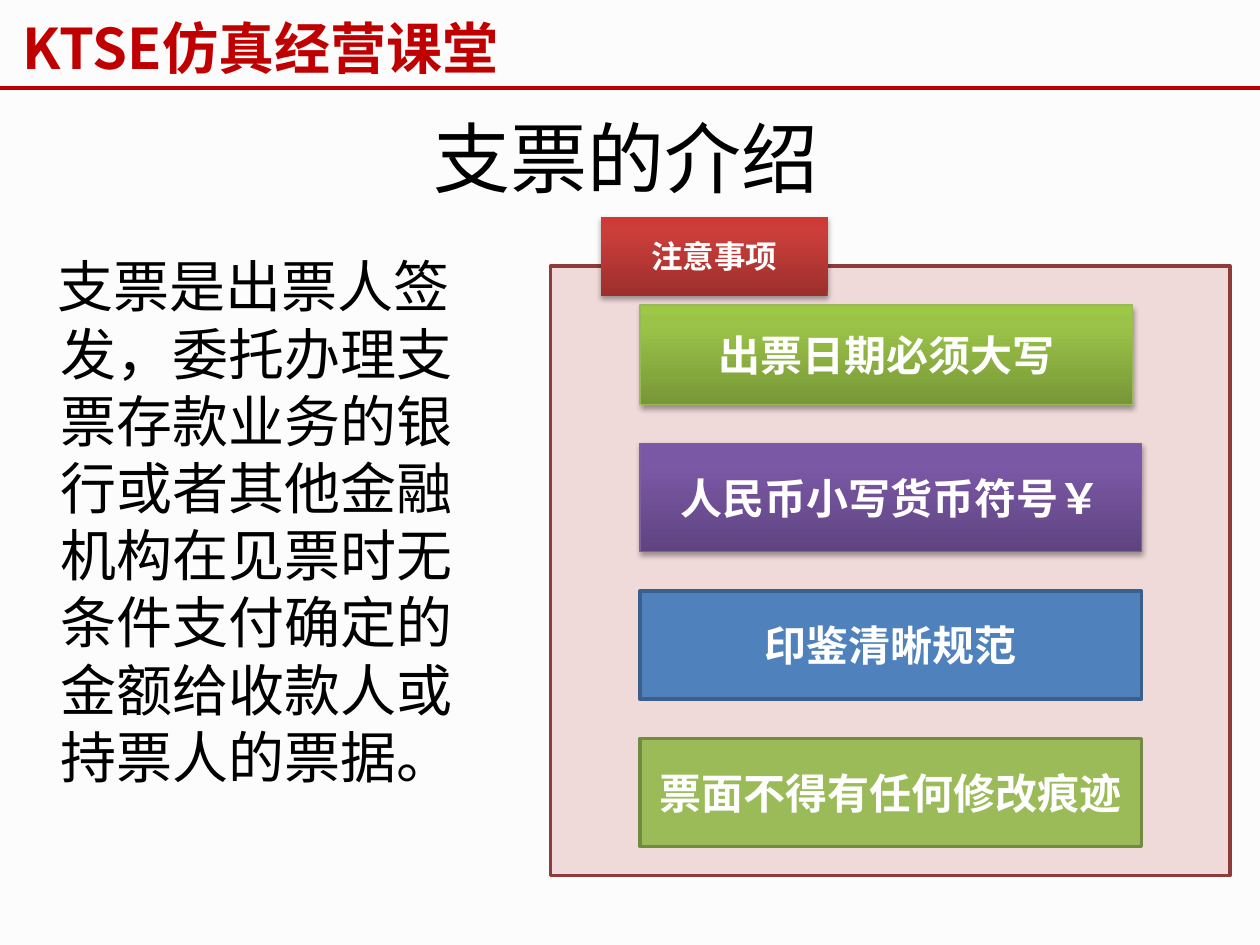
from dataclasses import dataclass
from typing import Optional

from lxml.etree import SubElement
from pptx import Presentation
from pptx.dml.color import RGBColor as RGB
from pptx.enum.shapes import MSO_CONNECTOR as Conn, MSO_SHAPE as Kind
from pptx.enum.text import MSO_ANCHOR as Anchor, PP_ALIGN as Align
from pptx.oxml.ns import qn
from pptx.util import Inches, Pt


@dataclass(frozen=True)
class Theme:
    back: str = "FCFCFC"
    brand: str = "C00000"
    ink: str = "000000"
    light: str = "FFFFFF"
    panel: str = "C0504D"
    edge: str = "8E3B39"
    font: str = "Calibri"
    head: str = "Noto Sans CJK SC"
    title: int = 44
    body: int = 32
    tile: int = 24
    tab: int = 18


T = Theme()


@dataclass(frozen=True)
class Run:
    text: str
    size: int
    color: str
    bold: bool = False
    font: str = T.font
    track: int = 0


@dataclass(frozen=True)
class Look:
    """Fill colours (three for a gradient, bottom to top) and outline."""
    fill: tuple[str, ...]
    line: Optional[str] = None
    width: float = 0.75
    alpha: int = 100
    kind: Kind = Kind.RECTANGLE


@dataclass(frozen=True)
class Tile:
    words: tuple[str, ...]
    width: float
    height: float
    look: Look


RED = Look(("9C2F2D", "CB3E3A", "CE3B37"))
STEP = Kind.FLOWCHART_PROCESS
TILES = (
    Tile(("出票日期必须大写",), 3.91, 0.79,
         Look(("779737", "9BC348", "9DC746"), "98B955")),
    Tile(("人民币小写货币符号", "￥"), 3.98, 0.86,
         Look(("5F4480", "7B58A6", "7C57A8"), "7D60A0")),
    Tile(("印鉴清晰规范",), 3.98, 0.86,
         Look(("4F81BD",), "3A5F8C", 2, kind=STEP)),
    Tile(("票面不得有任何修改痕迹",), 3.98, 0.86,
         Look(("9BBB59",), "738A42", 2, kind=STEP)),
)
TILE_X, TILE_Y, GAP = 5.08, 2.42, 0.31


def place(x: float, y: float, w: float, h: float) -> tuple:
    return Inches(x), Inches(y), Inches(w), Inches(h)


def write(shape, runs: list[Run], align=Align.LEFT, anchor=Anchor.TOP):
    frame = shape.text_frame
    frame.word_wrap = True
    frame.vertical_anchor = anchor
    para = frame.paragraphs[0]
    para.alignment = align
    for item in runs:
        run = para.add_run()
        run.text = item.text
        font = run.font
        font.name, font.size, font.bold = item.font, Pt(item.size), item.bold
        font.color.rgb = RGB.from_string(item.color)
        if item.track:
            font._element.set("spc", str(item.track))
    return para


def shade(shape, stops: tuple[str, ...]) -> None:
    """Give the shape a vertical gradient and a soft drop shadow."""
    shape.fill.gradient()
    shape.fill.gradient_angle = 90
    props = shape._element.spPr
    ramp = props.find(qn("a:gradFill")).find(qn("a:gsLst"))
    for stop in list(ramp):
        ramp.remove(stop)
    for pos, color in zip((0, 80, 100), stops):
        stop = SubElement(ramp, qn("a:gs"), pos=str(pos * 1000))
        SubElement(stop, qn("a:srgbClr"), val=color)
    cast = SubElement(props.find(qn("a:effectLst")), qn("a:outerShdw"),
                      blurRad=str(Pt(3.1)), dist=str(Pt(1.8)),
                      dir="5400000", rotWithShape="0")
    tint = SubElement(cast, qn("a:srgbClr"), val="000000")
    SubElement(tint, qn("a:alpha"), val="35000")


def draw_box(slide, box: tuple, look: Look):
    shape = slide.shapes.add_shape(look.kind, *box)
    shape.shadow.inherit = False
    if look.line:
        shape.line.color.rgb = RGB.from_string(look.line)
        shape.line.width = Pt(look.width)
    else:
        shape.line.fill.background()
    if len(look.fill) > 1:
        shade(shape, look.fill)
    else:
        shape.fill.solid()
        shape.fill.fore_color.rgb = RGB.from_string(look.fill[0])
    if look.alpha < 100:
        tint = shape._element.spPr.find(qn("a:solidFill"))[0]
        SubElement(tint, qn("a:alpha"), val=str(look.alpha * 1000))
    return shape


def draw_head(slide) -> None:
    rule = slide.shapes.add_connector(
        Conn.STRAIGHT, Inches(0), Inches(0.7), Inches(10), Inches(0.7))
    rule.line.color.rgb = RGB.from_string(T.brand)
    rule.line.width = Pt(2.25)
    SubElement(rule._element.spPr, qn("a:effectLst"))
    name = slide.shapes.add_textbox(*place(0.08, 0.06, 4.45, 0.64))
    write(name, [Run("KTSE仿真经营课堂", T.body, T.brand, True, T.head)])
    title = slide.shapes.add_textbox(*place(0.47, 0.62, 9, 1.25))
    write(title, [Run("支票的介绍", T.title, T.ink)],
          Align.CENTER, Anchor.MIDDLE)


def draw_body(slide) -> None:
    body = slide.shapes.add_textbox(*place(0, 1.95, 3.83, 5.37))
    text = ("支票是出票人签发，委托办理支票存款业务的银行或者其他金融机构"
            "在见票时无条件支付确定的金额给收款人或持票人的票据。")
    para = write(body, [Run(text, T.body, T.ink)])
    props = para._p.get_or_add_pPr()
    props.set("marL", str(Inches(0.38)))
    props.set("indent", str(Inches(-0.02)))


def draw_notes(slide) -> None:
    draw_box(slide, place(4.37, 2.11, 5.39, 4.84),
             Look((T.panel,), T.edge, 2, 20))
    tab = draw_box(slide, place(4.77, 1.72, 1.8, 0.63), RED)
    write(tab, [Run("注意事项", T.tab, T.light, True)],
          Align.CENTER, Anchor.MIDDLE)
    y = TILE_Y
    for tile in TILES:
        box = draw_box(
            slide, place(TILE_X, y, tile.width, tile.height), tile.look)
        runs = [Run(word, T.tile, T.light, True, track=-100 if i else 0)
                for i, word in enumerate(tile.words)]
        write(box, runs, Align.CENTER, Anchor.MIDDLE)
        y += tile.height + GAP


def main() -> None:
    deck = Presentation()
    deck.slide_width, deck.slide_height = Inches(10), Inches(7.5)
    slide = deck.slides.add_slide(deck.slide_layouts[6])
    slide.background.fill.solid()
    slide.background.fill.fore_color.rgb = RGB.from_string(T.back)
    draw_head(slide)
    draw_body(slide)
    draw_notes(slide)
    deck.save("out.pptx")


if __name__ == "__main__":
    main()
